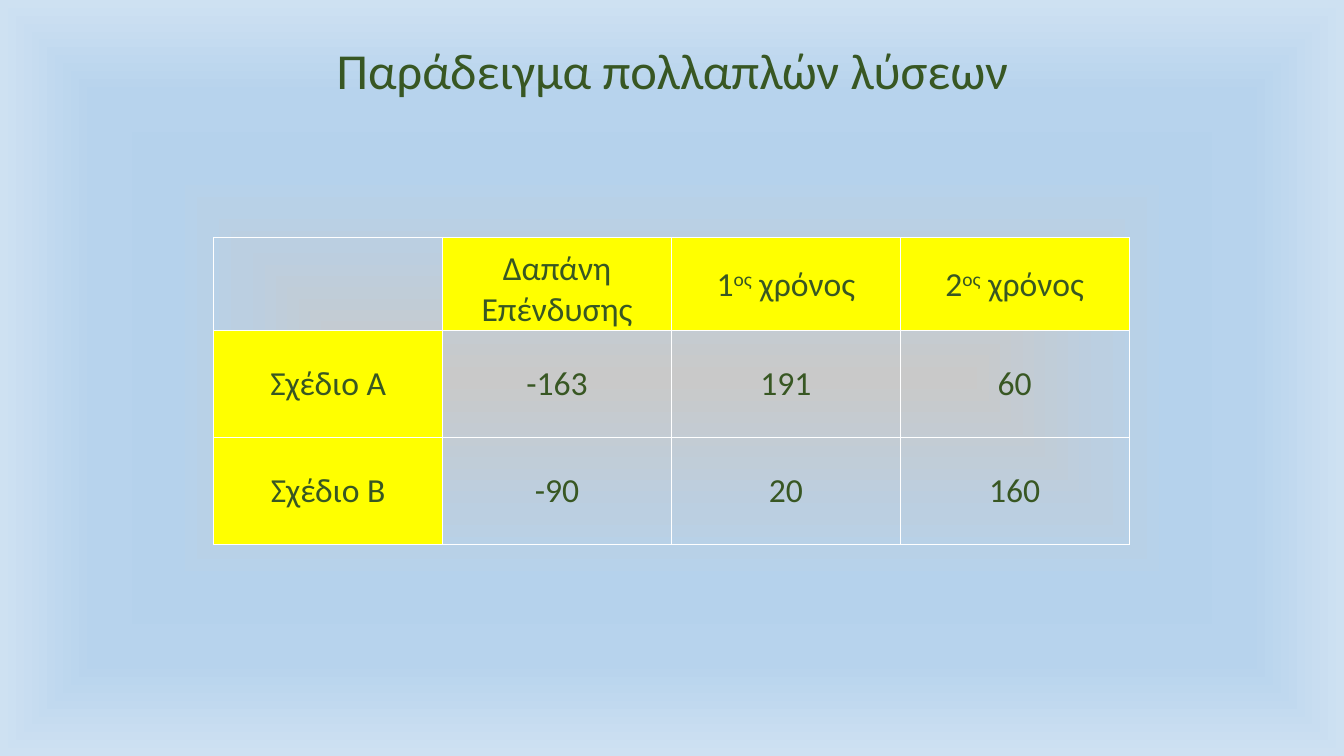
from pptx import Presentation
from pptx.dml.color import RGBColor
from pptx.enum.text import MSO_ANCHOR, PP_ALIGN
from pptx.oxml import parse_xml
from pptx.oxml.ns import nsdecls
from pptx.util import Inches, Pt

CENTER = PP_ALIGN.CENTER
MIDDLE, BOTTOM = MSO_ANCHOR.MIDDLE, MSO_ANCHOR.BOTTOM
GREEN = RGBColor(0x38, 0x57, 0x23)
YELLOW = RGBColor(0xFF, 0xFF, 0x00)
WHITE = RGBColor(0xFF, 0xFF, 0xFF)
GLOW = [
    (0, RGBColor(0xC9, 0xC9, 0xC9)),
    (36, RGBColor(0xBB, 0xCF, 0xE1)),
    (45, RGBColor(0xB8, 0xD1, 0xE7)),
    (54, RGBColor(0xB5, 0xD2, 0xEC)),
    (65, RGBColor(0xB5, 0xD2, 0xEC)),
    (75, RGBColor(0xB7, 0xD3, 0xED)),
    (100, RGBColor(0xCE, 0xE1, 0xF2)),
]


class Deck:
    font = "Calibri"
    color = GREEN

    def __init__(self, show):
        self.slide = show.slides.add_slide(show.slide_layouts[5])

    def back(self, stops):
        marks = "".join(
            f'<a:gs pos="{at * 1000}"><a:srgbClr val="{color}"/></a:gs>'
            for at, color in stops)
        fill = parse_xml(
            f'<p:bg {nsdecls("p", "a")}><p:bgPr><a:gradFill rotWithShape="1">'
            f'<a:gsLst>{marks}</a:gsLst><a:path path="shape">'
            '<a:fillToRect l="50000" t="50000" r="50000" b="50000"/></a:path>'
            '</a:gradFill><a:effectLst/></p:bgPr></p:bg>')
        self.slide.element.cSld.insert(0, fill)

    def text(self, para, parts, size):
        """Add runs; every second part is raised."""
        para.alignment = CENTER
        for i, part in enumerate(parts):
            run = para.add_run()
            run.text = part
            run.font.name = self.font
            run.font.size = Pt(size)
            run.font.color.rgb = self.color
            if i % 2:
                run.font._element.set("baseline", "30000")

    def title(self, text, left, top, width, height):
        shape = self.slide.shapes.title
        shape.left, shape.top = Inches(left), Inches(top)
        shape.width, shape.height = Inches(width), Inches(height)
        frame = shape.text_frame
        frame.word_wrap = True
        frame.vertical_anchor = MIDDLE
        para = frame.paragraphs[0]
        para.line_spacing = 0.9
        self.text(para, [text], 36)

    def border(self, cell):
        props = cell._tc.get_or_add_tcPr()
        for i, side in enumerate("LRTB"):
            props.insert(i, parse_xml(
                f'<a:ln{side} {nsdecls("a")} w="{Pt(1)}"><a:solidFill>'
                f'<a:srgbClr val="{WHITE}"/></a:solidFill></a:ln{side}>'))

    def table(self, rows, left, top, width, tall):
        grid = self.slide.shapes.add_table(
            len(rows), len(rows[0]), Inches(left), Inches(top),
            Inches(width), Inches(sum(tall))).table
        grid.first_row = grid.horz_banding = False
        for r, row in enumerate(rows):
            grid.rows[r].height = Inches(tall[r])
            for c, parts in enumerate(row):
                cell = grid.cell(r, c)
                cell.margin_left = cell.margin_right = Inches(0.01)
                cell.margin_top, cell.margin_bottom = Inches(0.01), 0
                cell.vertical_anchor = BOTTOM if (r, c) == (0, 1) else MIDDLE
                # Yellow heads on the top row and left column
                if parts and (r == 0 or c == 0):
                    cell.fill.solid()
                    cell.fill.fore_color.rgb = YELLOW
                else:
                    cell.fill.background()
                self.border(cell)
                self.text(cell.text_frame.paragraphs[0], parts, 24)


show = Presentation()
show.slide_width, show.slide_height = Inches(13.33), Inches(7.5)
deck = Deck(show)

# Background and title
deck.back(GLOW)
deck.title("Παράδειγμα πολλαπλών λύσεων", 0.92, 0, 11.5, 1.45)

# Cash flows of the two plans
years = [[year, "ος", " χρόνος"] for year in "12"]
deck.table([
    [[], ["Δαπάνη Επένδυσης"], *years],
    [["Σχέδιο Α"], ["-163"], ["191"], ["60"]],
    [["Σχέδιο Β"], ["-90"], ["20"], ["160"]],
], 2.12, 2.36, 9.08, [0.92, 1.06, 1.06])

show.save("out.pptx")
